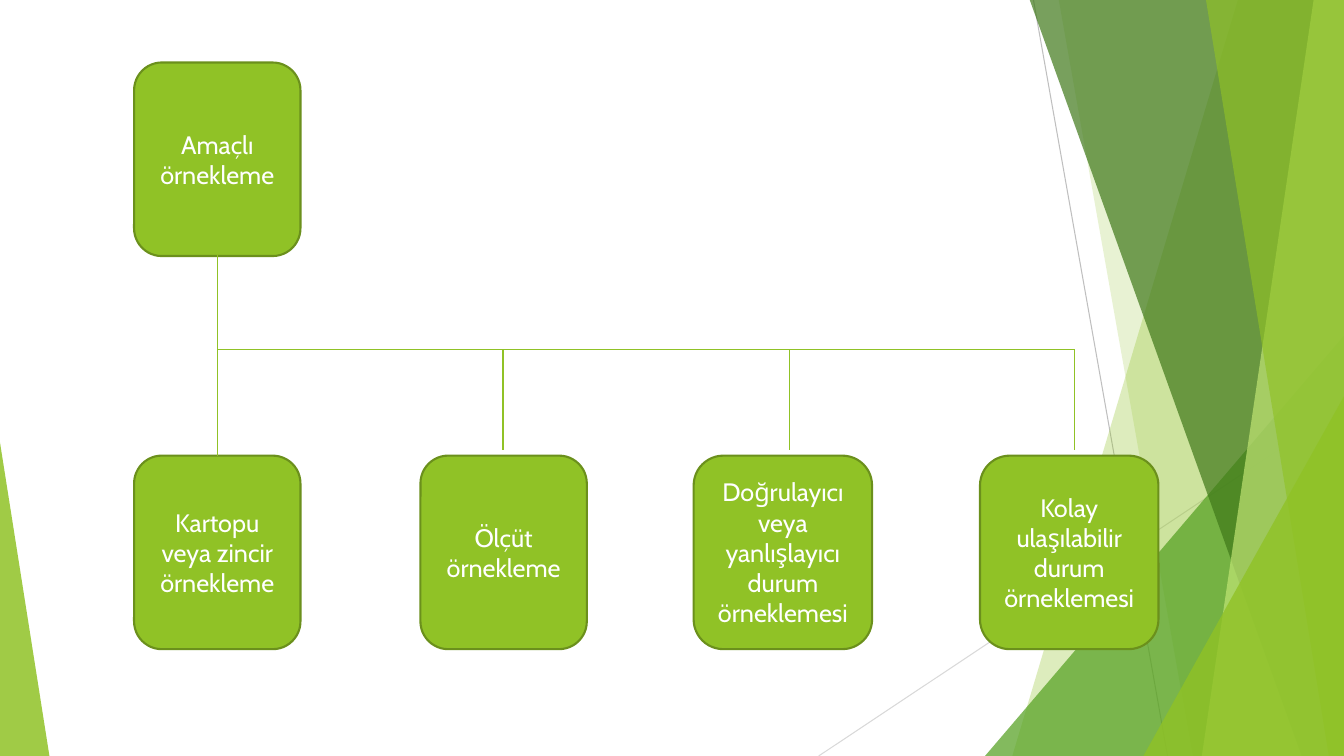
from lxml import etree
from pptx import Presentation
from pptx import util as u
from pptx.dml.color import RGBColor
from pptx.enum import shapes, text
from pptx.oxml import ns

GREEN, BORDER, WHITE = "90C226", "6B901C", "FFFFFF"
WIDTH, HEIGHT, BLEED = 13.33, 7.5, -0.01


def color(value):
    return RGBColor.from_string(value)


class SlideBuilder:
    """Draw styled elements on the current slide, with lengths in inches."""

    def __init__(self, slide, font="Cabin", size=18):
        self.slide, self.font, self.size = slide, font, size

    def line(self, start, end, tint=GREEN, weight=1):
        link = self.slide.shapes.add_connector(
            shapes.MSO_CONNECTOR.STRAIGHT, *map(u.Inches, start + end))
        link.line.color.rgb = color(tint)
        link.line.width = u.Pt(weight)
        etree.SubElement(link._element.spPr, ns.qn("a:effectLst"))

    def translucent(self, shape, tint, opacity):
        shape.shadow.inherit = False
        shape.line.fill.background()
        shape.fill.solid()
        shape.fill.fore_color.rgb = color(tint)
        tone = shape._element.spPr.find(".//" + ns.qn("a:srgbClr"))
        etree.SubElement(tone, ns.qn("a:alpha"), val=str(opacity * 1000))

    def band(self, top_left, bottom_left, tint, opacity):
        start, *rest = [(u.Inches(x), u.Inches(y)) for x, y in (
            (top_left, BLEED), (WIDTH, BLEED), (WIDTH, HEIGHT), (bottom_left, HEIGHT))]
        outline = self.slide.shapes.build_freeform(*start)
        outline.add_line_segments(rest, close=True)
        self.translucent(outline.convert_to_shape(), tint, opacity)

    def triangle(self, left, top, width, apex, tint, opacity):
        corner = self.slide.shapes.add_shape(
            shapes.MSO_SHAPE.ISOSCELES_TRIANGLE,
            *map(u.Inches, (left, top, width, HEIGHT - top)))
        corner.adjustments[0] = apex
        self.translucent(corner, tint, opacity)

    def box(self, left, top, width, label):
        node = self.slide.shapes.add_shape(
            shapes.MSO_SHAPE.ROUNDED_RECTANGLE,
            *map(u.Inches, (left, top, width, 1.92)))
        node.shadow.inherit = False
        node.fill.solid()
        node.fill.fore_color.rgb = color(GREEN)
        node.line.color.rgb = color(BORDER)
        node.line.width = u.Pt(1.5)
        frame = node.text_frame
        frame.word_wrap = True
        frame.vertical_anchor = text.MSO_ANCHOR.MIDDLE
        paragraph = frame.paragraphs[0]
        paragraph.alignment = text.PP_ALIGN.CENTER
        run = paragraph.add_run()
        run.text = label
        run.font.name, run.font.size = self.font, u.Pt(self.size)
        run.font.color.rgb = color(WHITE)


def draw_backdrop(builder):
    builder.line((10.25, 0), (11.58, HEIGHT), "BFBFBF", 0.75)
    builder.line((WIDTH, 4.03), (8.12, HEIGHT), "D9D9D9", 0.75)
    builder.band(12.28, 10.04, GREEN, 30)
    builder.band(10.5, 11.83, GREEN, 20)
    builder.triangle(9.77, 3.33, 3.56, 1, "54A021", 72)
    builder.band(10.21, 12.91, "3F7819", 70)
    builder.band(13.03, 11.92, "C0E474", 70)
    builder.band(11.96, 13.18, GREEN, 65)
    builder.triangle(11.34, 3.93, 1.99, 1, GREEN, 80)
    builder.triangle(0, 4.39, 0.49, 0, GREEN, 85)


def draw_tree(builder):
    root_left, root_top, child_top, rail = 1.33, 0.62, 4.52, 3.47
    children = [
        (root_left, 1.65, "Kartopu veya zincir örnekleme"),
        (4.17, 1.65, "Ölçüt örnekleme"),
        (6.88, 1.77, "Doğrulayıcı veya yanlışlayıcı durum örneklemesi"),
        (9.72, 1.77, "Kolay ulaşılabilir durum örneklemesi"),
    ]
    for left, width, label in children:
        builder.box(left, child_top, width, label)
    builder.box(root_left, root_top, 1.65, "Amaçlı örnekleme")

    trunk, *branches = 2.16, 4.99, 7.83, 10.66
    builder.line((trunk, 2.53), (trunk, child_top))
    builder.line((trunk, rail), (branches[-1], rail))
    for branch in reversed(branches):
        builder.line((branch, rail), (branch, 4.46))


def main():
    deck = Presentation()
    deck.slide_width, deck.slide_height = u.Inches(WIDTH), u.Inches(HEIGHT)
    builder = SlideBuilder(deck.slides.add_slide(deck.slide_layouts[6]))
    draw_backdrop(builder)
    draw_tree(builder)
    deck.save("out.pptx")


if __name__ == "__main__":
    main()
